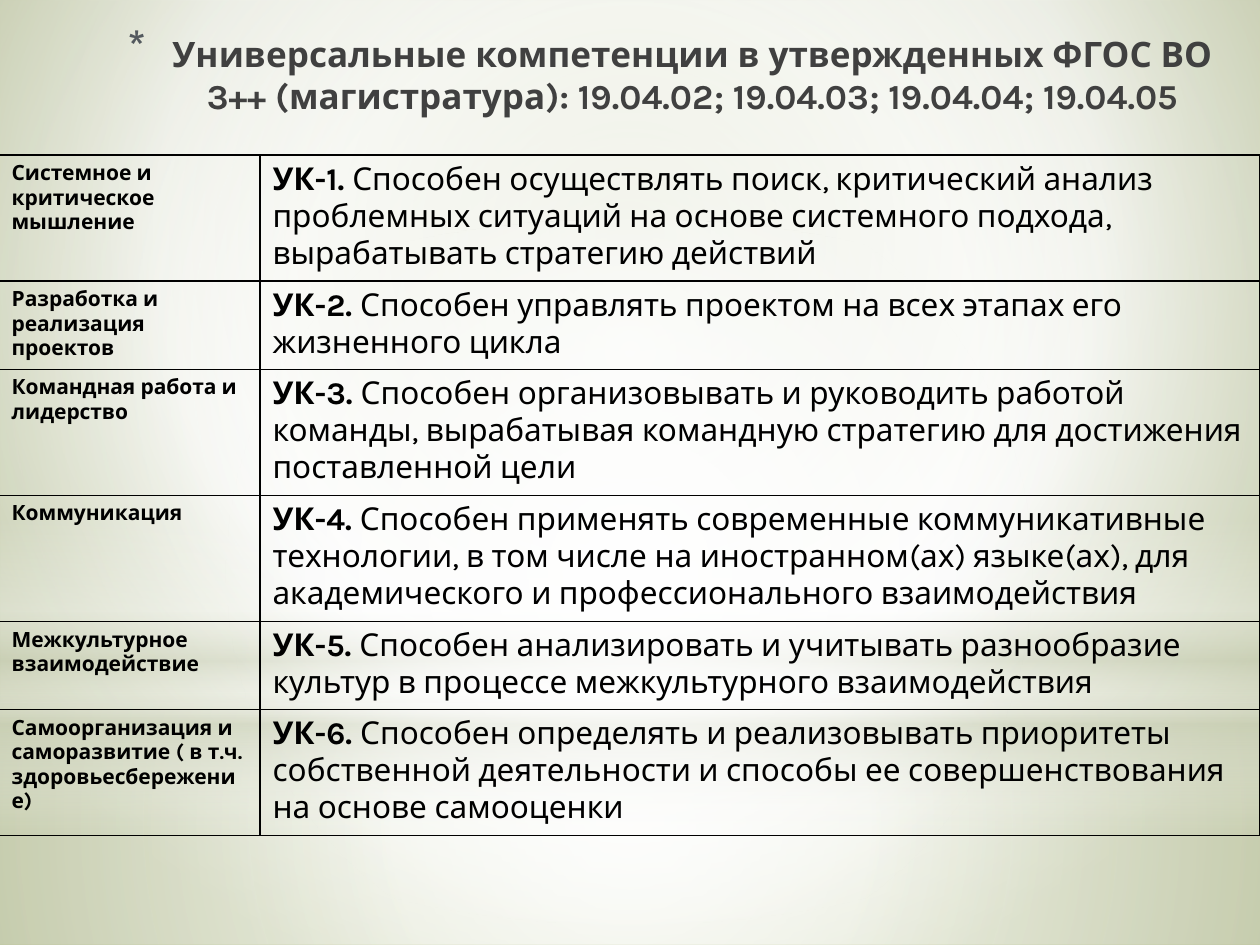
from lxml import etree
from pptx import Presentation
from pptx import util as u
from pptx.dml.color import RGBColor
from pptx.enum import shapes, text
from pptx.oxml import ns, parse_xml

EMU_PER_PX = 914400 / 126
WIDTH, HEIGHT = 1260, 945
FONT = "Karla"
COLORS = {"white": "FFFFFF", "haze": "CCD1B9", "sage": "C8CFAC", "olive": "AFBB84",
          "title": "404040", "bullet": "53595E", "ink": "000000"}
CENTER = (50, 50, 50, 50)

TITLE = ("Универсальные компетенции в утвержденных ФГОС ВО 3++ (магистратура): "
         "19.04.02; 19.04.03; 19.04.04; 19.04.05")

# Category, code, competence, lines of text in the row
COMPETENCES = [
    ("Системное и критическое мышление", "УК-1.",
     "Способен осуществлять поиск, критический анализ проблемных ситуаций на основе "
     "системного подхода, вырабатывать стратегию действий", 3),
    ("Разработка и реализация проектов", "УК-2.",
     "Способен управлять проектом на всех этапах его жизненного цикла", 2),
    ("Командная работа и лидерство", "УК-3.",
     "Способен организовывать и руководить работой команды, вырабатывая командную "
     "стратегию для достижения поставленной цели", 3),
    ("Коммуникация", "УК-4.",
     "Способен применять современные коммуникативные технологии, в том числе на "
     "иностранном(ах) языке(ах), для академического и профессионального взаимодействия", 3),
    ("Межкультурное взаимодействие", "УК-5.",
     "Способен анализировать и учитывать разнообразие культур в процессе "
     "межкультурного взаимодействия", 2),
    ("Самоорганизация и саморазвитие ( в т.ч. здоровьесбережение)", "УК-6.",
     "Способен определять и реализовывать приоритеты собственной деятельности и "
     "способы ее совершенствования на основе самооценки", 3),
]


def px(length):
    return u.Emu(round(length * EMU_PER_PX))


def add_element(parent, tag, **attributes):
    child = etree.SubElement(parent, ns.qn(tag))
    for key, value in attributes.items():
        child.set(key, str(value))
    return child


def set_gradient(owner, stops, focus=None):
    """Swap owner's solid fill for a gradient: circular around focus, else vertical.

    Stops are (position %, color name, opacity %).
    """
    gradient = parse_xml(f'<a:gradFill {ns.nsdecls("a")} rotWithShape="1"/>')
    stop_list = add_element(gradient, "a:gsLst")
    for position, color, opacity in stops:
        stop = add_element(stop_list, "a:gs", pos=position * 1000)
        tint = add_element(stop, "a:srgbClr", val=COLORS[color])
        if opacity < 100:
            add_element(tint, "a:alpha", val=opacity * 1000)
    if focus:
        circle = add_element(gradient, "a:path", path="circle")
        add_element(circle, "a:fillToRect",
                    **{side: inset * 1000 for side, inset in zip("ltrb", focus)})
    else:
        add_element(gradient, "a:lin", ang=90 * 60000, scaled=0)
    owner.replace(owner.find(ns.qn("a:solidFill")), gradient)


def add_glow(slide, kind, box, stops, focus=None):
    glow = slide.shapes.add_shape(kind, *map(px, box))
    glow.shadow.inherit = False
    glow.line.fill.background()
    glow.fill.solid()
    set_gradient(glow.element.spPr, stops, focus)


def add_backdrop(slide, width, height):
    slide.background.fill.solid()
    set_gradient(slide.element.find(".//" + ns.qn("p:bgPr")),
                 [(0, "sage", 100), (60, "white", 100), (100, "olive", 100)], (20, 10, 20, 60))
    horizon = 703
    rectangle, oval = shapes.MSO_SHAPE.RECTANGLE, shapes.MSO_SHAPE.OVAL
    add_glow(slide, rectangle, (0, horizon, width, height - horizon),
             [(0, "white", 91), (37, "white", 76), (100, "haze", 79)], CENTER)
    add_glow(slide, rectangle, (0, 0, width, horizon),
             [(0, "white", 89), (48, "white", 62), (100, "haze", 79)], CENTER)
    add_glow(slide, rectangle, (0, 519, width, 315),
             [(0, "white", 0), (29, "white", 30), (45, "haze", 40),
              (55, "white", 26), (65, "haze", 60), (100, "white", 0)])
    add_glow(slide, oval, (0, 220, width, horizon),
             [(0, "white", 100), (56, "white", 0)], CENTER)


def add_run(paragraph, words, size, color, bold):
    run = paragraph.add_run()
    run.text = words
    run.font.name, run.font.size, run.font.bold = FONT, u.Pt(size), bold
    run.font.color.rgb = RGBColor.from_string(COLORS[color])


def add_title(slide, box):
    frame = slide.shapes.add_textbox(*map(px, box)).text_frame
    frame.word_wrap = True
    frame.vertical_anchor = text.MSO_ANCHOR.TOP
    heading = frame.paragraphs[0]
    heading.alignment = text.PP_ALIGN.CENTER
    add_run(heading, TITLE, 20, "title", True)

    layout = heading._p.get_or_add_pPr()
    layout.set("marL", str(px(44)))
    layout.set("indent", str(-px(44)))
    add_element(add_element(layout, "a:buClr"), "a:srgbClr", val=COLORS["bullet"])
    add_element(layout, "a:buSzPct", val=128000)
    add_element(layout, "a:buChar", char="*")


def style_cell(cell):
    """Clear the fill and draw a thin border on all four sides."""
    properties = cell._tc.get_or_add_tcPr()
    for side in ("a:lnL", "a:lnR", "a:lnT", "a:lnB"):
        border = add_element(properties, side, w=u.Pt(1))
        add_element(add_element(border, "a:solidFill"), "a:srgbClr", val=COLORS["ink"])
    cell.fill.background()


def add_competence_table(slide, left, top, column_widths):
    heights = [37 * lines + 12 for *_, lines in COMPETENCES]
    table = slide.shapes.add_table(
        len(heights), len(column_widths),
        *map(px, (left, top, sum(column_widths), sum(heights)))).table
    table.first_row = table.horz_banding = False
    for column, width in zip(table.columns, column_widths):
        column.width = px(width)
    for row, height, (category, code, competence, _) in zip(table.rows, heights, COMPETENCES):
        row.height = px(height)
        category_cell, competence_cell = row.cells
        add_run(category_cell.text_frame.paragraphs[0], category, 12, "ink", True)
        statement = competence_cell.text_frame.paragraphs[0]
        add_run(statement, code + " ", 18, "ink", True)
        add_run(statement, competence, 18, "ink", False)
        for cell in row.cells:
            style_cell(cell)


def main():
    deck = Presentation()
    deck.slide_width, deck.slide_height = px(WIDTH), px(HEIGHT)
    slide = deck.slides.add_slide(deck.slide_layouts[6])
    add_backdrop(slide, WIDTH, HEIGHT)
    add_title(slide, (115, 26, 1111, 158))
    add_competence_table(slide, -1, 155, (261, 1000))
    deck.save("out.pptx")


if __name__ == "__main__":
    main()
